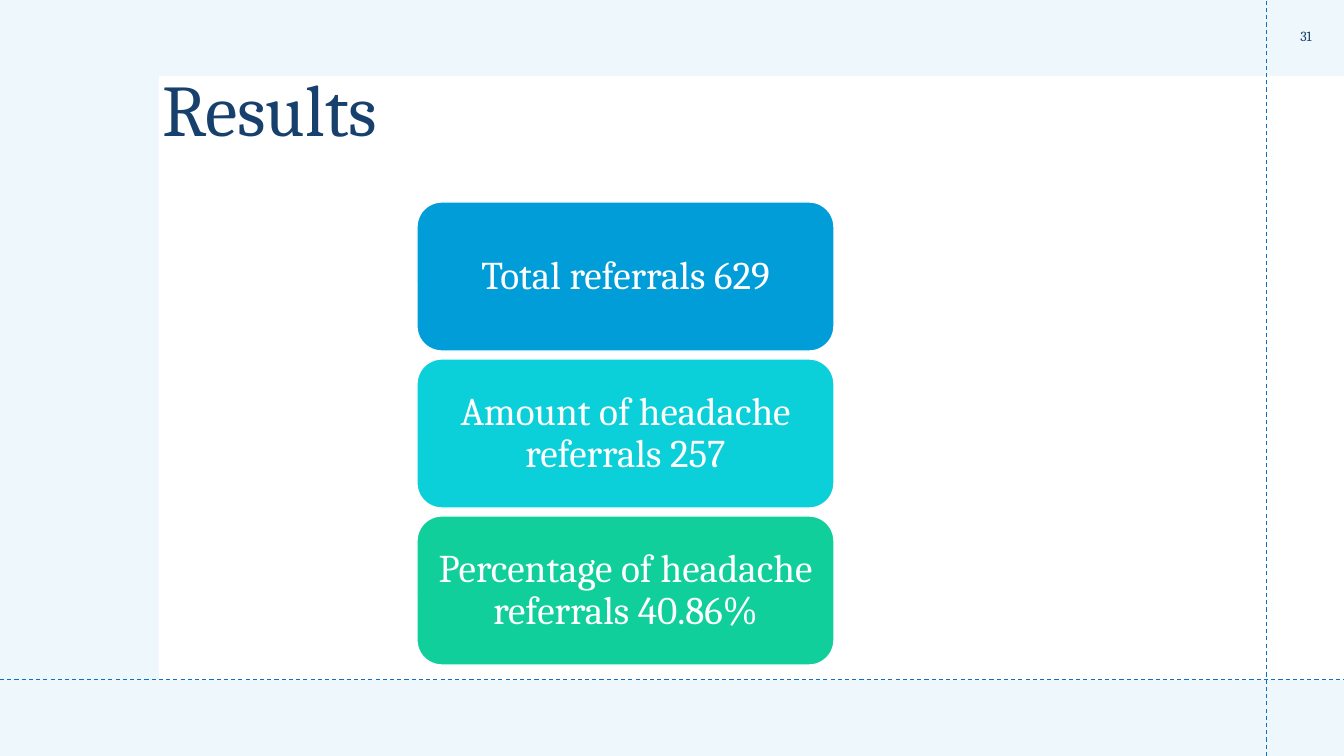
from lxml import etree
from pptx import Presentation
from pptx.dml.color import RGBColor
from pptx.enum.dml import MSO_LINE_DASH_STYLE as Dash
from pptx.enum.shapes import MSO_CONNECTOR as Connector, MSO_SHAPE as Shape
from pptx.enum.text import MSO_ANCHOR as Anchor, MSO_AUTO_SIZE as AutoSize, PP_ALIGN as Align
from pptx.oxml.ns import qn
from pptx.util import Emu, Pt

WHITE = RGBColor(0xFF, 0xFF, 0xFF)
PALE = RGBColor(0xDB, 0xEF, 0xF9)
NAVY = RGBColor(0x17, 0x40, 0x6D)
GUIDE = RGBColor(0x0F, 0x6F, 0xC6)
BLUE = RGBColor(0x00, 0x9D, 0xD9)
CYAN = RGBColor(0x0B, 0xD0, 0xD9)
GREEN = RGBColor(0x10, 0xCF, 0x9B)

WIDTH, HEIGHT = 1344, 756
CARD_LEFT, CARD_TOP, CARD_WIDTH, CARD_HEIGHT, CARD_PITCH = 417, 202, 417, 149, 157
CARDS = [
    ("Total referrals 629", BLUE),
    ("Amount of headache referrals 257", CYAN),
    ("Percentage of headache referrals 40.86%", GREEN),
]


def px(*lengths):
    return [Emu(round(length * 914400 / 100.8)) for length in lengths]


class SlideBuilder:
    font = "Cambria"

    def __init__(self, page):
        self.page = page

    def set_text(self, box, text, size, color, align, spacing=None):
        frame = box.text_frame
        frame.word_wrap = True
        frame.auto_size = AutoSize.NONE
        frame.vertical_anchor = Anchor.MIDDLE
        para = frame.paragraphs[0]
        para.alignment = align
        para.line_spacing = spacing
        span = para.add_run()
        span.text = text
        span.font.name = self.font
        span.font.size = Pt(size)
        span.font.color.rgb = color

    def panel(self, kind, place, color, alpha=None):
        box = self.page.shapes.add_shape(kind, *px(*place))
        box.shadow.inherit = False
        box.fill.solid()
        box.fill.fore_color.rgb = color
        box.line.fill.background()
        if alpha is not None:
            tint = box.element.spPr.find(qn("a:solidFill"))[0]
            etree.SubElement(tint, qn("a:alpha"), val=str(alpha * 1000))
        return box

    def card(self, place, text, color):
        box = self.panel(Shape.ROUNDED_RECTANGLE, place, color)
        box.line.color.rgb = WHITE
        box.line.width = Pt(1)
        frame = box.text_frame
        frame.margin_left, frame.margin_right = px(12, 12)
        frame.margin_top, frame.margin_bottom = px(6, 6)
        self.set_text(box, text, 28, WHITE, Align.CENTER, 0.9)

    def guide(self, *ends):
        line = self.page.shapes.add_connector(Connector.STRAIGHT, *px(*ends))
        line.line.color.rgb = GUIDE
        line.line.width = Pt(0.75)
        line.line.dash_style = Dash.DASH
        etree.SubElement(line.element.spPr, qn("a:effectLst"))

    def title(self, place, text):
        box = self.page.shapes.title
        box.left, box.top, box.width, box.height = px(*place)
        self.set_text(box, text, 52, NAVY, Align.LEFT, 0.9)
        # Bring the title in front of the background panels
        box.element.getparent().append(box.element)

    def label(self, place, text):
        box = self.page.shapes.add_textbox(*px(*place))
        self.set_text(box, text, 10, NAVY, Align.CENTER)


def main():
    deck = Presentation()
    deck.slide_width, deck.slide_height = px(WIDTH, HEIGHT)
    builder = SlideBuilder(deck.slides.add_slide(deck.slide_layouts[5]))

    builder.panel(Shape.RECTANGLE, (0, 0, WIDTH, HEIGHT), PALE, alpha=45)
    builder.panel(Shape.RECTANGLE, (159, 76, 1185, 604), WHITE)
    builder.guide(1267, HEIGHT, 1267, 0)
    builder.guide(0, 680, WIDTH, 680)
    builder.title((152, 40, 1053, 146), "Results")
    builder.label((1268, -2, 76, 76), "31")
    for row, (text, color) in enumerate(CARDS):
        place = (CARD_LEFT, CARD_TOP + row * CARD_PITCH, CARD_WIDTH, CARD_HEIGHT)
        builder.card(place, text, color)

    deck.save("out.pptx")


if __name__ == "__main__":
    main()
